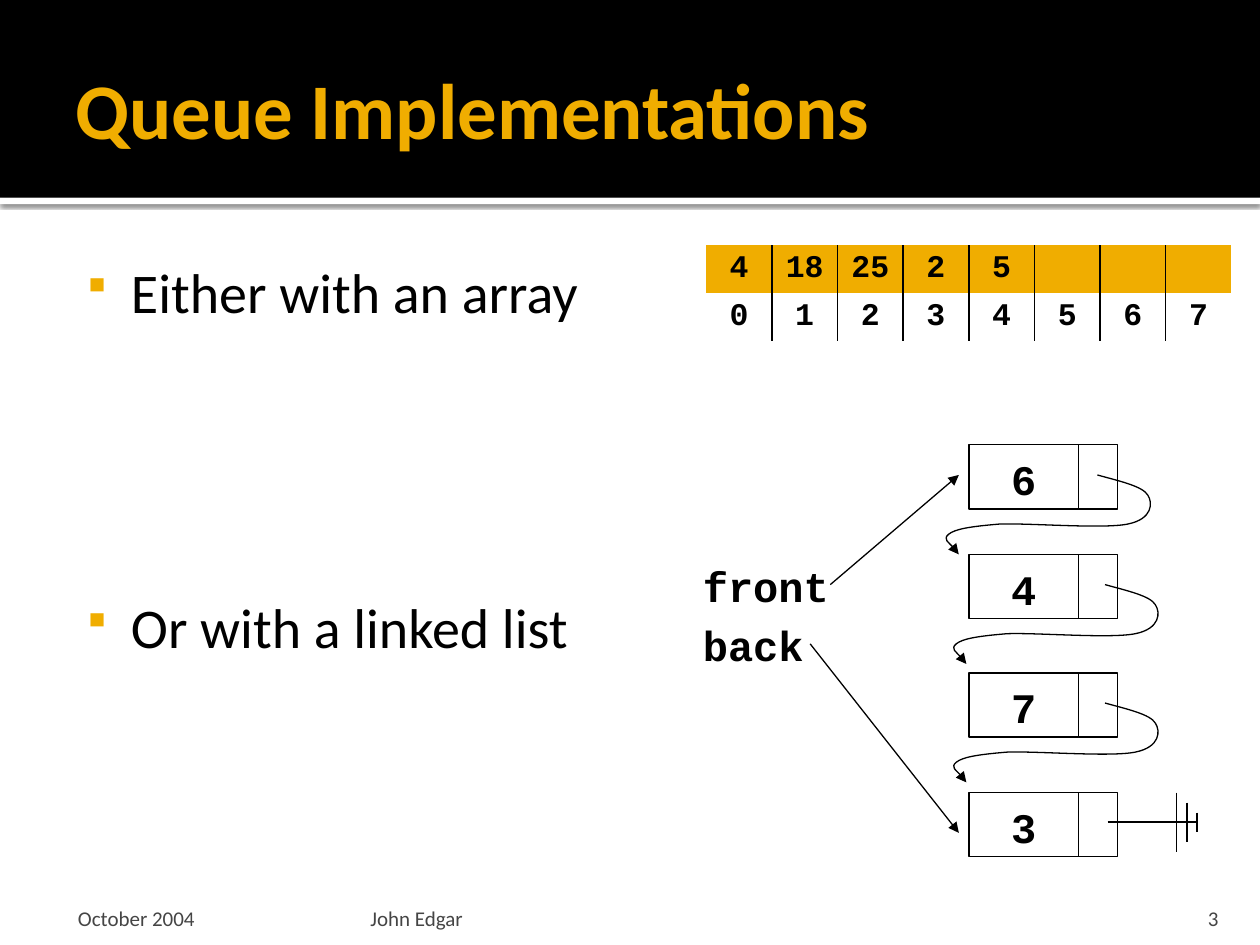
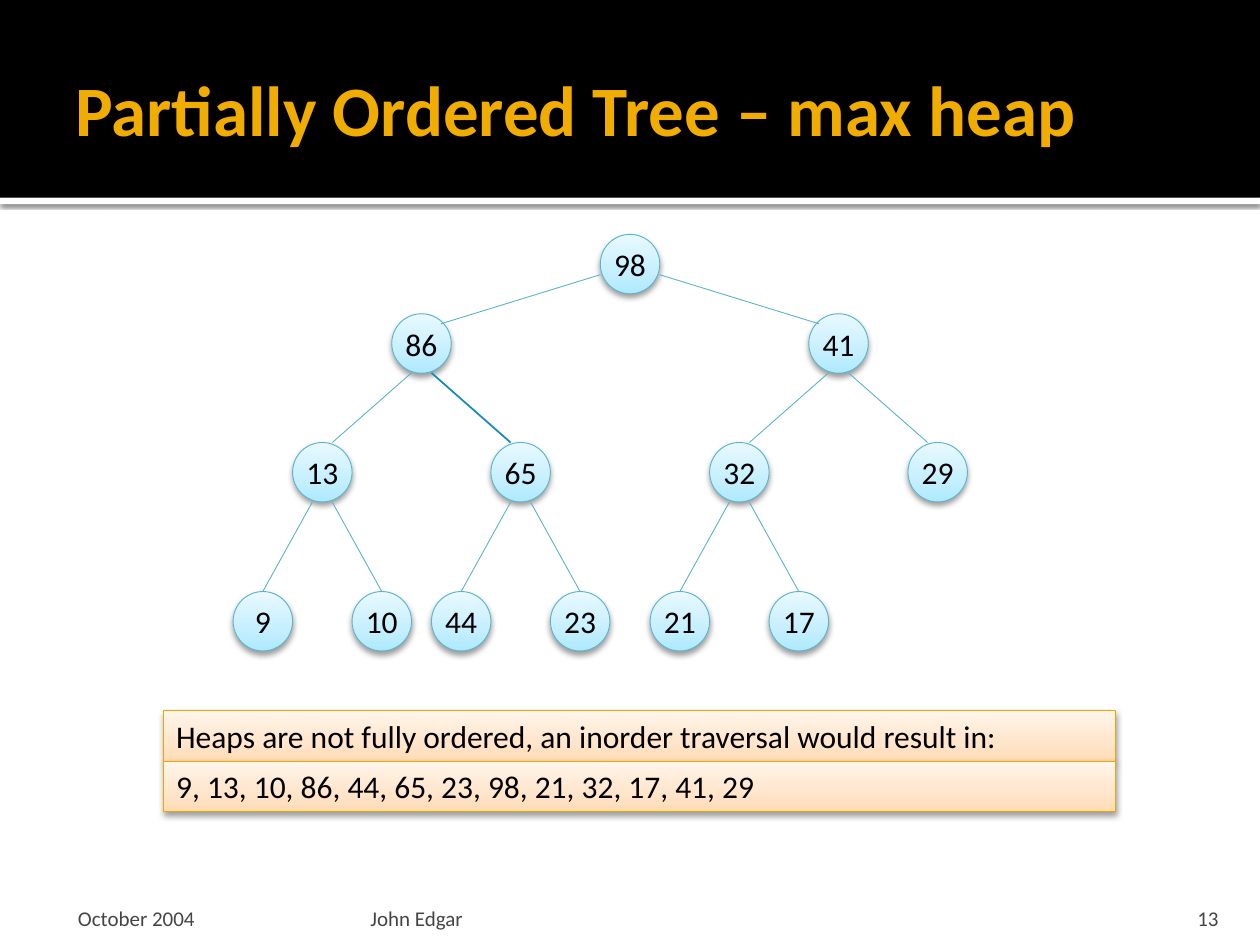
"""Build two lecture slides: queue implementations and a max heap."""
import pptx
import pptx.dml.color
import pptx.enum.shapes
import pptx.enum.text
import pptx.oxml
import pptx.oxml.ns
import pptx.util
import copy

RGBColor = pptx.dml.color.RGBColor
SHAPE = pptx.enum.shapes.MSO_SHAPE
ALIGN = pptx.enum.text.PP_ALIGN
ANCHOR = pptx.enum.text.MSO_ANCHOR
BLACK = RGBColor(0x00, 0x00, 0x00)
WHITE = RGBColor(0xFF, 0xFF, 0xFF)
GOLD = RGBColor(0xF0, 0xAD, 0x00)
GREY = RGBColor(0x45, 0x45, 0x45)
TEAL = RGBColor(0x5B, 0xB3, 0xCA)
BLUE = RGBColor(0x16, 0x8B, 0xBA)
AMBER = RGBColor(0xEB, 0xA9, 0x00)
SKY = [RGBColor(0xAD, 0xE9, 0xFF), RGBColor(0xC5, 0xEF, 0xFF), RGBColor(0xE9, 0xF9, 0xFF)]
PEACH = [RGBColor(0xFF, 0xDB, 0xB5), RGBColor(0xFF, 0xE5, 0xCB), RGBColor(0xFF, 0xF5, 0xEB)]
SANS, MONO = "Calibri", "Courier New"
NAMESPACE = pptx.oxml.ns.nsdecls("a")
SOFT_SHADOW, BAND_SHADOW = (38, 3.5, 2), (60, 2.5, 0.8)
NO_INSETS = (0, 0, 0, 0)
NODE_INSETS = (7.2, 5.1, 7.2, 0)

deck = pptx.Presentation()
deck.slide_width = pptx.util.Inches(10)
deck.slide_height = pptx.util.Inches(7.5)
COLUMN = deck.slide_width // 100
ROW = deck.slide_height // 75


def add_box(page, kind, area, text="", size=18, font=SANS, color=BLACK, bold=False,
            align=ALIGN.LEFT, anchor=ANCHOR.MIDDLE, insets=(7.2, 3.6, 7.2, 3.6),
            fill=None, line=None, line_width=0.5, shadow=None):
    """Add a shape or, without a kind, a text box placed in columns and rows."""
    left, top, width, height = area
    frame = [int(n) for n in (left * COLUMN, top * ROW, width * COLUMN, height * ROW)]
    box = page.shapes.add_shape(kind, *frame) if kind else page.shapes.add_textbox(*frame)
    box.shadow.inherit = False
    if isinstance(fill, list):
        box.fill.gradient()
        stops = box._element.spPr.find(".//" + pptx.oxml.ns.qn("a:gsLst"))
        stops.insert(1, copy.deepcopy(stops[0]))
        for stop, position, shade in zip(box.fill.gradient_stops, (0, 0.35, 1), fill):
            stop.position = position
            stop.color.rgb = shade
        box.fill.gradient_angle = 90
    elif fill is not None:
        box.fill.solid()
        box.fill.fore_color.rgb = fill
    else:
        box.fill.background()
    if line is not None:
        box.line.color.rgb = line
        box.line.width = pptx.util.Pt(line_width)
    else:
        box.line.fill.background()
    if shadow:
        alpha, blur, distance = shadow
        box._element.spPr.find(pptx.oxml.ns.qn("a:effectLst")).append(pptx.oxml.parse_xml(
            f'<a:outerShdw {NAMESPACE} blurRad="{pptx.util.Pt(blur)}" '
            f'dist="{pptx.util.Pt(distance)}" dir="5400000" rotWithShape="0">'
            f'<a:srgbClr val="000000"><a:alpha val="{alpha * 1000}"/></a:srgbClr></a:outerShdw>'))
    words = box.text_frame
    words.word_wrap = True
    words.vertical_anchor = anchor
    words.margin_left, words.margin_top, words.margin_right, words.margin_bottom = [
        pptx.util.Pt(inset) for inset in insets]
    for number, sentence in enumerate(text.splitlines()):
        para = words.add_paragraph() if number else words.paragraphs[0]
        para.alignment = align
        span = para.add_run()
        span.text = sentence
        span.font.size = pptx.util.Pt(size)
        span.font.name = font
        span.font.bold = bold
        span.font.color.rgb = color
    return box


def add_line(page, points, color=BLACK, width=0.75, arrow=False):
    """Draw a connector through two points, or Bezier curves, three points to a bend."""
    points = [(int(x * COLUMN), int(y * ROW)) for x, y in points]
    if len(points) == 2:
        line = page.shapes.add_connector(
            pptx.enum.shapes.MSO_CONNECTOR.STRAIGHT, *points[0], *points[1])
        line._element.spPr.append(pptx.oxml.parse_xml(f"<a:effectLst {NAMESPACE}/>"))
    else:
        outline = page.shapes.build_freeform(*points[0])
        outline.add_line_segments(points[1:], close=False)
        line = outline.convert_to_shape()
        line.fill.background()
        line.shadow.inherit = False
        segments = line._element.spPr.findall(".//" + pptx.oxml.ns.qn("a:lnTo"))
        track = segments[0].getparent()
        for first in range(0, len(segments), 3):
            bend = pptx.oxml.parse_xml(f"<a:cubicBezTo {NAMESPACE}/>")
            track.append(bend)
            for segment in segments[first:first + 3]:
                bend.append(segment[0])
                track.remove(segment)
    line.line.color.rgb = color
    line.line.width = pptx.util.Pt(width)
    if arrow:
        line._element.spPr.find(pptx.oxml.ns.qn("a:ln")).append(
            pptx.oxml.parse_xml(f'<a:tailEnd {NAMESPACE} type="triangle"/>'))


pages = []
for title, title_size, number in [("Queue Implementations", 45, "3"),
                                  ("Partially Ordered Tree – max heap", 40.5, "13")]:
    page = deck.slides.add_slide(deck.slide_layouts[6])
    add_box(page, SHAPE.RECTANGLE, (0, 15.7, 100, 0.5), fill=WHITE, shadow=BAND_SHADOW)
    add_box(page, SHAPE.RECTANGLE, (0, 0, 100, 15.7), fill=BLACK)
    add_box(page, None, (5, 1.7, 90, 13.7), title, title_size, color=GOLD, bold=True,
            insets=(7.2, 3.6, 3.6, 3.6))
    for left, width, text, align, inset in [(5, 23.3, "October 2004", ALIGN.LEFT, 8.6),
                                            (28.9, 60.2, "John Edgar", ALIGN.LEFT, 3.6),
                                            (89.7, 8, number, ALIGN.RIGHT, 7.2)]:
        add_box(page, None, (left, 70.85, width, 3), text, 12, color=GREY, align=align,
                anchor=ANCHOR.BOTTOM, insets=(inset, 3.6, inset, 0))
    pages.append(page)
queue_page, heap_page = pages

body = add_box(queue_page, None, (5, 19.4, 90, 50.6),
               "Either with an array\nOr with a linked list", 32,
               anchor=ANCHOR.TOP, insets=(4.3, 7.2, 7.2, 3.6))
for para, gap in zip(body.text_frame.paragraphs, (0, 153)):
    para.space_before = pptx.util.Pt(gap)
    settings = para._p.get_or_add_pPr()
    settings.set("marL", str(pptx.util.Inches(0.48)))
    settings.set("indent", str(pptx.util.Inches(-0.35)))
    for bullet in (f'<a:buClr {NAMESPACE}><a:srgbClr val="{GOLD}"/></a:buClr>',
                   f'<a:buSzPct {NAMESPACE} val="80000"/>',
                   f'<a:buFont {NAMESPACE} typeface="Wingdings" charset="2"/>',
                   f'<a:buChar {NAMESPACE} char="§"/>'):
        settings.append(pptx.oxml.parse_xml(bullet))

array_rows = [["4", "18", "25", "2", "5", "", "", ""], [str(index) for index in range(8)]]
array_frame = queue_page.shapes.add_table(
    2, 8, int(56.05 * COLUMN), int(19.45 * ROW), int(41.7 * COLUMN), int(7.6 * ROW))
array_frame._element.find(".//" + pptx.oxml.ns.qn("a:tableStyleId")).text = (
    "{2D5ABB26-0587-4C30-8999-92F81FD0307C}")
array = array_frame.table
array.first_row = array.horz_banding = False
for row, values in enumerate(array_rows):
    for column, value in enumerate(values):
        cell = array.cell(row, column)
        cell.margin_left = cell.margin_right = pptx.util.Inches(0.05)
        cell.margin_bottom = pptx.util.Inches(0.02)
        if row == 0:
            cell.fill.solid()
            cell.fill.fore_color.rgb = GOLD
        else:
            cell.fill.background()
        for side, shown in (("lnR", column < 7), ("lnL", column > 0)):
            if shown:
                cell._tc.get_or_add_tcPr().insert(0, pptx.oxml.parse_xml(
                    f'<a:{side} {NAMESPACE} w="12700"><a:solidFill><a:srgbClr val="{BLACK}"/>'
                    f'</a:solidFill></a:{side}>'))
        para = cell.text_frame.paragraphs[0]
        para.alignment = ALIGN.CENTER
        if value:
            span = para.add_run()
            span.text = value
            span.font.size = pptx.util.Pt(18)
            span.font.name = MONO
            span.font.bold = True
            span.font.color.rgb = BLACK

node_tops = [35.3, 44, 53.4, 62.9]
for value, top in zip("6473", node_tops):
    add_box(queue_page, SHAPE.RECTANGLE, (76.9, top, 8.7, 5.1), value, 24, MONO, bold=True,
            align=ALIGN.CENTER, anchor=ANCHOR.TOP, insets=NODE_INSETS,
            line=BLACK, line_width=0.75)
    add_box(queue_page, SHAPE.RECTANGLE, (85.6, top, 3.1, 5.1), line=BLACK, line_width=0.75)

for name, top, start, end in [("front", 44, (65.9, 46.4), (76.1, 37.7)),
                              ("back", 48.7, (64.3, 51.1), (76.1, 66.1))]:
    add_box(queue_page, None, (54.8, top, 13.4, 5), name, 24, MONO, bold=True,
            anchor=ANCHOR.TOP)
    add_line(queue_page, [start, end], arrow=True)

link_bends = [(0, 0), (1.8, 0.5), (3.6, 0.9), (4, 1.6), (4.4, 2.2), (4.4, 3.5), (2.4, 3.9),
              (0.4, 4.3), (-5.5, 3.8), (-7.8, 3.9), (-10.2, 4.1), (-11.3, 4.3), (-11.8, 4.7),
              (-12.3, 5.1), (-11.1, 6), (-11, 6.3)]
for left, top in zip((87.1, 87.7, 87.7), node_tops):
    add_line(queue_page, [(left + x, top + 2.4 + y) for x, y in link_bends], arrow=True)

ground = 65.25
add_line(queue_page, [(87.9, ground), (95, ground)])
for left, reach in ((93.4, 2.35), (94.2, 1.55), (95, 0.75)):
    add_line(queue_page, [(left, ground - reach), (left, ground + reach)])

heap = [98, 86, 41, 13, 65, 32, 29, 9, 10, 44, 23, 21, 17]
levels = [(0, 18.6), (16.55, 24.9), (7.87, 35.12), (4.72, 46.95)]
edge_ends = [None, (2.35, 3.2, 1.55, 0.8), (0.8, 4.7, 0.8, 0), (0.8, 4.75, 0, 0)]
centres = []
for index, value in enumerate(heap):
    level = (index + 1).bit_length() - 1
    spread, top = levels[level]
    side = -1 if index % 2 else 1
    parent = (index - 1) // 2
    centre = centres[parent] + side * spread if index else 50
    centres.append(centre)
    add_box(heap_page, SHAPE.OVAL, (centre - 2.36, top, 4.72, 4.72), str(value),
            align=ALIGN.CENTER, insets=NO_INSETS, fill=SKY, line=TEAL, shadow=SOFT_SHADOW)
    if index:
        exit_x, exit_y, entry_x, entry_y = edge_ends[level]
        color, width = (BLUE, 1) if value == 65 else (TEAL, 0.5)
        add_line(heap_page, [(centres[parent] + side * exit_x, levels[level - 1][1] + exit_y),
                             (centre - side * entry_x, top + entry_y)], color, width)

for row, text in enumerate(["Heaps are not fully ordered, an inorder traversal would result in:",
                            "9, 13, 10, 86, 44, 65, 23, 98, 21, 32, 17, 41, 29"]):
    add_box(heap_page, SHAPE.RECTANGLE, (13, 56.4 + 4 * row, 75.55, 4), text,
            fill=PEACH, line=AMBER, shadow=SOFT_SHADOW)

deck.save("out.pptx")
